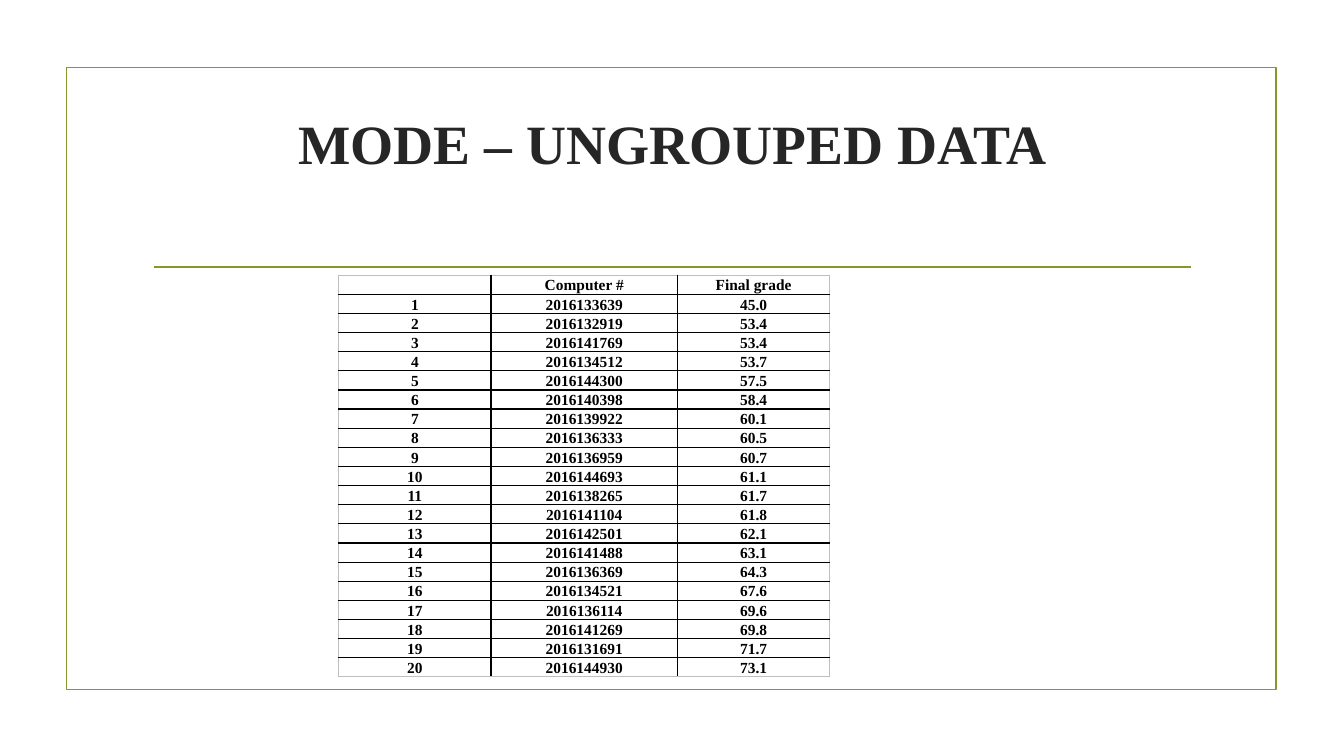
"""Build the slide on the mode of ungrouped data, with its table of grades."""
from lxml.etree import SubElement
from pptx import Presentation
from pptx.dml.color import RGBColor
from pptx.enum.shapes import MSO_CONNECTOR, MSO_SHAPE
from pptx.enum.text import MSO_ANCHOR as Anchor, MSO_AUTO_SIZE, PP_ALIGN
from pptx.oxml.ns import qn
from pptx.util import Inches, Pt

COLORS = {"accent": "83992A", "title": "262626", "text": "000000", "edge": "BFBFBF"}
GRADES = [
    ("2016133639", "45.0"), ("2016132919", "53.4"), ("2016141769", "53.4"),
    ("2016134512", "53.7"), ("2016144300", "57.5"), ("2016140398", "58.4"),
    ("2016139922", "60.1"), ("2016136333", "60.5"), ("2016136959", "60.7"),
    ("2016144693", "61.1"), ("2016138265", "61.7"), ("2016141104", "61.8"),
    ("2016142501", "62.1"), ("2016141488", "63.1"), ("2016136369", "64.3"),
    ("2016134521", "67.6"), ("2016136114", "69.6"), ("2016141269", "69.8"),
    ("2016131691", "71.7"), ("2016144930", "73.1"),
]


def format_paragraph(paragraph, size, color):
    paragraph.alignment = PP_ALIGN.CENTER
    for run in paragraph.runs:
        for key, value in {"name": "Times New Roman", "size": Pt(size), "bold": True}.items():
            setattr(run.font, key, value)
        run.font.color.rgb = RGBColor.from_string(COLORS[color])
    points = str(round(size * 100))
    for line_break in paragraph._p.findall(qn("a:br")):
        SubElement(line_break, qn("a:rPr"), sz=points, b="1")
    end = SubElement(paragraph._p, qn("a:endParaRPr"), sz=points, b="1")
    SubElement(end, qn("a:latin"), typeface="Times New Roman")


def add_border(cell, side, color):
    border = SubElement(cell._tc.get_or_add_tcPr(), qn(f"a:{side}"), w=str(Pt(1)))
    fill = SubElement(border, qn("a:solidFill"))
    SubElement(fill, qn("a:srgbClr"), val=COLORS[color])


prs = Presentation()
prs.slide_width, prs.slide_height = Inches(13.33), Inches(7.5)
slide = prs.slides.add_slide(prs.slide_layouts[5])
accent = RGBColor.from_string(COLORS["accent"])

frame = slide.shapes.add_shape(
    MSO_SHAPE.RECTANGLE, Inches(0.66), Inches(0.67), Inches(12), Inches(6.17))
frame.shadow.inherit = False
frame.fill.background()

divider = slide.shapes.add_connector(
    MSO_CONNECTOR.STRAIGHT, Inches(1.53), Inches(2.65), Inches(11.81), Inches(2.65))
SubElement(divider._element.spPr, qn("a:effectLst"))
for outline in (frame.line, divider.line):
    outline.color.rgb = accent
    outline.width = Pt(1.25)

title = slide.shapes.title
title.left, title.top = Inches(1.42), Inches(1.07)
title.width, title.height = Inches(10.5), Inches(1.43)
title.text_frame.text = "MODE – UNGROUPED DATA\v"
title.text_frame.auto_size = MSO_AUTO_SIZE.NONE
title.text_frame.vertical_anchor = Anchor.MIDDLE
heading = title.text_frame.paragraphs[0]
heading.line_spacing = 0.9
format_paragraph(heading, 39.6, "title")

rows = [("", "Computer #", "Final grade")]
rows += [(str(number), *grade) for number, grade in enumerate(GRADES, 1)]
last_row, last_column = len(rows) - 1, len(rows[0]) - 1
grades = slide.shapes.add_table(
    len(rows), len(rows[0]), Inches(3.36), Inches(2.73), Inches(4.87), Inches(3.99)).table
grades.first_row = grades.horz_banding = False
for column, width in zip(grades.columns, (1.51, 1.85, 1.51)):
    column.width = Inches(width)

cell_format = {
    "vertical_anchor": Anchor.BOTTOM, "margin_left": Inches(0.01),
    "margin_top": Inches(0.01), "margin_right": Inches(0.01), "margin_bottom": 0,
}
for r, values in enumerate(rows):
    grades.rows[r].height = Inches(0.19)
    for c, value in enumerate(values):
        cell = grades.cell(r, c)
        cell.text = value
        for key, setting in cell_format.items():
            setattr(cell, key, setting)
        format_paragraph(cell.text_frame.paragraphs[0], 11, "text")
        outer = {"lnL": c == 0, "lnR": c == last_column, "lnT": r == 0, "lnB": r == last_row}
        for side, is_outer in outer.items():
            add_border(cell, side, "edge" if is_outer else "text")
        cell.fill.background()

prs.save("out.pptx")
